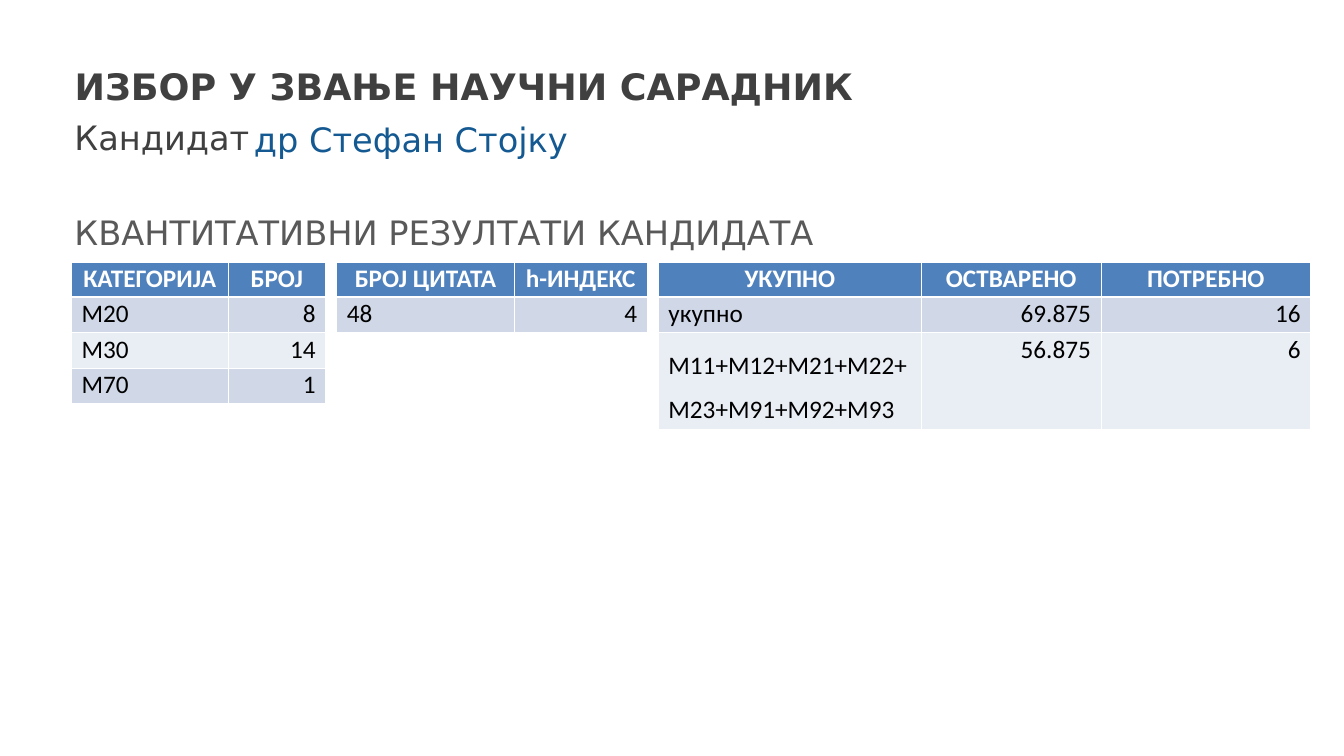
from dataclasses import dataclass
from pptx import Presentation
from pptx.dml.color import RGBColor
from pptx.enum.text import MSO_ANCHOR, PP_ALIGN
from pptx.oxml import parse_xml
from pptx.oxml.ns import nsdecls
from pptx.util import Inches, Pt


@dataclass(frozen=True)
class Theme:
    head_font: str = "DejaVu Sans"
    cell_font: str = "Calibri"
    title: int = 26
    sub: int = 24
    cell: int = 18
    dark: str = "404040"
    grey: str = "595959"
    blue: str = "145991"
    white: str = "FFFFFF"
    black: str = "000000"
    head: str = "4F81BD"
    bands: tuple = ("D0D8E8", "E9EDF4")
    thin: float = 0.45
    thick: float = 1.47


def write(frame, text, font, size, color, bold=False,
          align=PP_ALIGN.LEFT, space=1.0):
    """Put one formatted paragraph in a text frame."""
    par = frame.paragraphs[0]
    par.alignment = align
    par.line_spacing = space
    par.space_before = Pt(0)
    run = par.add_run()
    run.text = text
    run.font.name = font
    run.font.size = Pt(size)
    run.font.bold = bold
    run.font.color.rgb = RGBColor.from_string(color)


class Deck:
    def __init__(self, theme):
        self.theme = theme
        self.prs = Presentation()
        self.prs.slide_width = Inches(13.33)
        self.prs.slide_height = Inches(7.5)
        self.slide = self.prs.slides.add_slide(self.prs.slide_layouts[5])

    def title(self, text, box):
        shape = self.slide.shapes.title
        shape.left, shape.top, shape.width, shape.height = map(Inches, box)
        shape.text_frame.vertical_anchor = MSO_ANCHOR.BOTTOM
        write(shape.text_frame, text, self.theme.head_font, self.theme.title,
              self.theme.dark, bold=True)

    def label(self, text, box, color, anchor=MSO_ANCHOR.TOP, space=1.0):
        frame = self.slide.shapes.add_textbox(*map(Inches, box)).text_frame
        frame.word_wrap = True
        frame.vertical_anchor = anchor
        write(frame, text, self.theme.head_font, self.theme.sub, color,
              space=space)

    def border(self, cell, row):
        # The rule between the header and the body is thick
        thin, thick = self.theme.thin, self.theme.thick
        sides = {"L": thin, "R": thin,
                 "T": thick if row == 1 else thin,
                 "B": thick if row == 0 else thin}
        props = cell._tc.get_or_add_tcPr()
        for side, width in sides.items():
            props.append(parse_xml(
                f'<a:ln{side} {nsdecls("a")} w="{Pt(width)}"><a:solidFill>'
                f'<a:srgbClr val="{self.theme.white}"/></a:solidFill>'
                f'</a:ln{side}>'))

    def table(self, left, widths, rows, heights, anchor=MSO_ANCHOR.MIDDLE,
              wide=()):
        """Draw a table; cells listed in wide get open line spacing."""
        theme = self.theme
        grid = self.slide.shapes.add_table(
            len(rows), len(widths), Inches(left), Inches(2.6),
            Inches(sum(widths)), Inches(sum(heights))).table
        grid.horz_banding = False
        for col, width in zip(grid.columns, widths):
            col.width = Inches(width)
        for r, texts in enumerate(rows):
            grid.rows[r].height = Inches(heights[r])
            for c, text in enumerate(texts):
                cell = grid.cell(r, c)
                top = r == 0
                self.border(cell, r)
                cell.fill.solid()
                cell.fill.fore_color.rgb = RGBColor.from_string(
                    theme.head if top else theme.bands[(r - 1) % 2])
                cell.vertical_anchor = anchor
                side = PP_ALIGN.RIGHT if c else PP_ALIGN.LEFT
                write(cell.text_frame, text, theme.cell_font, theme.cell,
                      theme.white if top else theme.black, bold=top,
                      align=PP_ALIGN.CENTER if top else side,
                      space=1.43 if (r, c) in wide else 0.83)


def main():
    theme = Theme()
    deck = Deck(theme)

    # Headings
    deck.title("ИЗБОР У ЗВАЊЕ НАУЧНИ САРАДНИК", (0.64, 0.54, 12.06, 0.58))
    deck.label("Кандидат", (0.64, 1.11, 12.06, 0.5), theme.dark)
    deck.label("КВАНТИТАТИВНИ РЕЗУЛТАТИ КАНДИДАТА",
               (0.64, 1.97, 12.06, 0.58), theme.grey, MSO_ANCHOR.BOTTOM)
    deck.label("др Стефан Стојку", (2.42, 1.12, 6.75, 0.48), theme.blue,
               MSO_ANCHOR.MIDDLE, space=1.1)

    # Totals
    line = 0.35
    deck.table(6.53, (2.61, 1.78, 2.08),
               (("УКУПНО", "ОСТВАРЕНО", "ПОТРЕБНО"),
                ("укупно", "69.875", "16"),
                ("М11+M12+M21+M22+M23+M91+M92+M93", "56.875", "6")),
               (line, line, 0.93), MSO_ANCHOR.TOP, wide={(2, 0)})

    # Papers by category
    deck.table(0.71, (1.55, 0.97),
               (("КАТЕГОРИЈА", "БРОЈ"), ("М20", "8"), ("М30", "14"),
                ("М70", "1")), [line] * 4)

    # Citations
    deck.table(3.34, (1.76, 1.32),
               (("БРОЈ ЦИТАТА", "h-ИНДЕКС"), ("48", "4")), [line] * 2)

    deck.prs.save("out.pptx")


if __name__ == "__main__":
    main()
